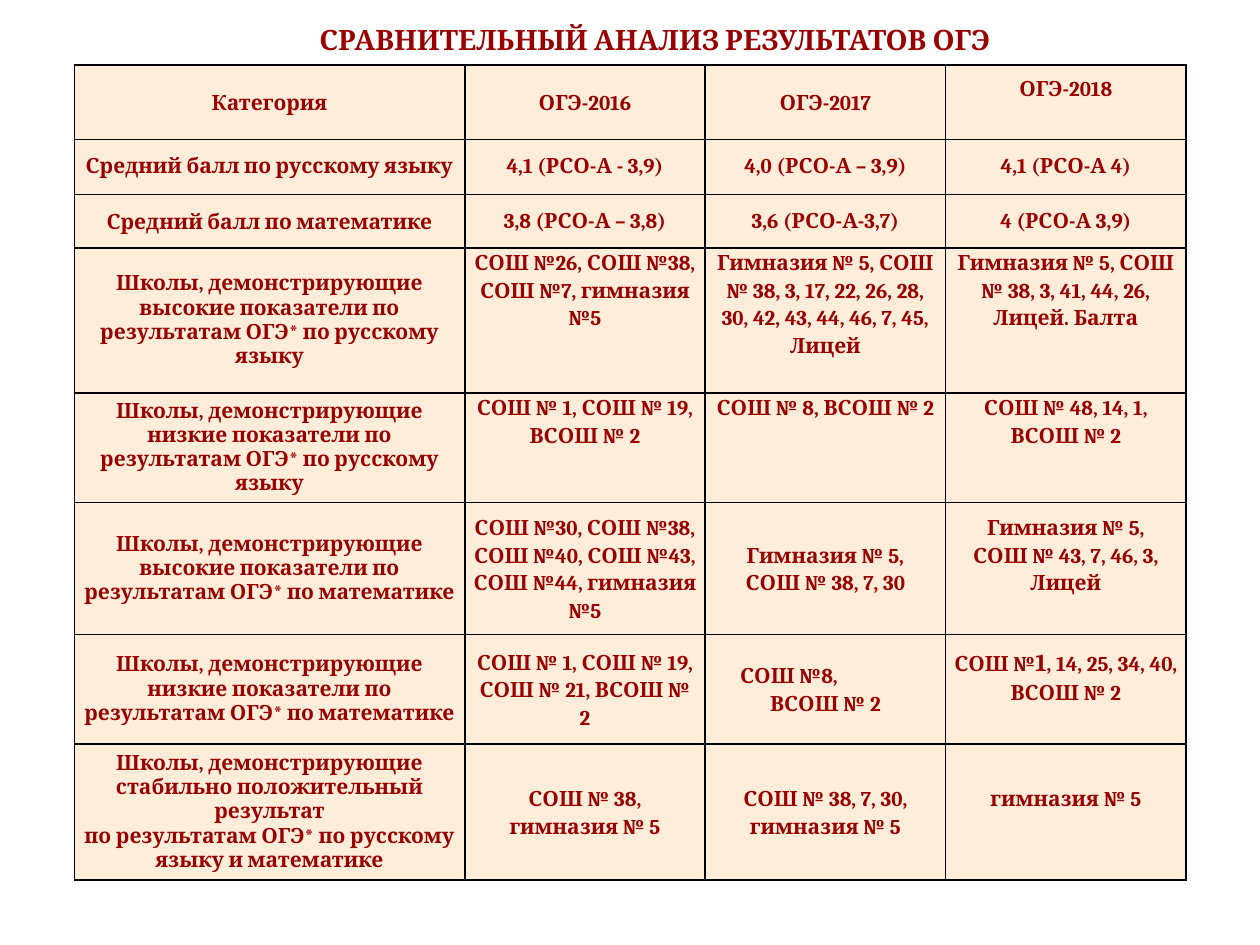
from dataclasses import dataclass

from lxml.etree import SubElement
from pptx import Presentation
from pptx.dml.color import RGBColor
from pptx.enum.text import MSO_ANCHOR as Anchor, MSO_AUTO_SIZE as AutoSize, PP_ALIGN as Align
from pptx.oxml.ns import qn
from pptx.util import Pt


@dataclass(frozen=True)
class Theme:
    """Colours, font and type sizes of the slide."""
    font: str = "Cambria"
    ink: str = "990000"
    fill: str = "FFECD9"
    border: str = "000000"
    title: float = 16
    body: float = 12
    large: float = 14


THEME = Theme()
TITLE = "СРАВНИТЕЛЬНЫЙ АНАЛИЗ РЕЗУЛЬТАТОВ ОГЭ"
COLUMNS = [223.1, 137.4, 137.4, 137.4]
HEIGHTS = [42.5, 31.5, 30.5, 82.8, 62.6, 75.5, 62.6, 77.8]
RESULTS = [
    ["Категория", "ОГЭ-2016", "ОГЭ-2017", "ОГЭ-2018"],
    ["Средний балл по русскому языку", "4,1 (РСО-А - 3,9)", "4,0 (РСО-А – 3,9)", "4,1 (РСО-А 4)"],
    ["Средний балл по математике", "3,8 (РСО-А – 3,8)", "3,6 (РСО-А-3,7)", "4 (РСО-А 3,9)"],
    ["Школы, демонстрирующие высокие показатели по результатам ОГЭ* по русскому языку",
     "СОШ №26, СОШ №38, СОШ №7, гимназия №5",
     "Гимназия № 5, СОШ № 38, 3, 17, 22, 26, 28, 30, 42, 43, 44, 46, 7, 45, Лицей",
     "Гимназия № 5, СОШ № 38, 3, 41, 44, 26, Лицей. Балта"],
    ["Школы, демонстрирующие низкие показатели по результатам ОГЭ* по русскому языку",
     "СОШ № 1, СОШ № 19, ВСОШ № 2", "СОШ № 8, ВСОШ № 2", "СОШ № 48, 14, 1, ВСОШ № 2"],
    ["Школы, демонстрирующие высокие показатели по результатам ОГЭ* по математике",
     "СОШ №30, СОШ №38, СОШ №40, СОШ №43, СОШ №44, гимназия №5",
     "Гимназия № 5,\nСОШ № 38, 7, 30", "Гимназия № 5,\nСОШ № 43, 7, 46, 3, Лицей"],
    ["Школы, демонстрирующие низкие показатели по результатам ОГЭ* по математике",
     "СОШ № 1, СОШ № 19, СОШ № 21, ВСОШ № 2", "СОШ №8,\nВСОШ № 2",
     "СОШ №|1|, 14, 25, 34, 40, ВСОШ № 2"],
    ["Школы, демонстрирующие стабильно положительный результат\n"
     "по результатам ОГЭ* по русскому языку и математике",
     "СОШ № 38, гимназия № 5", "СОШ № 38, 7, 30, гимназия № 5", "гимназия № 5"],
]
LOOSE = 1.15
SPACING = {0: (LOOSE, LOOSE), 1: (1, 1), 2: (LOOSE, 1)}
TOP_ROWS = (3, 4)
RAISED_ROWS = (0, 5, 6, 7)
INDENTED = (6, 2)


def apply(target, values):
    """Set each named attribute of the target."""
    for name, value in values.items():
        setattr(target, name, value)


def add_span(para, text, size):
    """Add a bold run in the theme font and ink."""
    span = para.add_run()
    span.text = text
    apply(span.font, {"name": THEME.font, "size": Pt(size), "bold": True})
    span.font.color.rgb = RGBColor.from_string(THEME.ink)


def add_title(page):
    """Place and format the title placeholder."""
    box = page.shapes.title
    apply(box, {"left": Pt(28.8), "top": Pt(9.4), "width": Pt(691.2), "height": Pt(46)})
    apply(box.text_frame, {"vertical_anchor": Anchor.TOP, "word_wrap": True,
                           "auto_size": AutoSize.NONE})
    para = box.text_frame.paragraphs[0]
    apply(para, {"alignment": Align.CENTER, "line_spacing": 1, "space_before": Pt(0)})
    add_span(para, TITLE, THEME.title)


def add_borders(cell):
    """Draw a thin line on all four sides of a cell."""
    properties = cell._tc.get_or_add_tcPr()
    for side in ("a:lnL", "a:lnR", "a:lnT", "a:lnB"):
        line = SubElement(properties, qn(side), w=str(Pt(1)))
        solid = SubElement(line, qn("a:solidFill"))
        SubElement(solid, qn("a:srgbClr"), val=THEME.border)


def fill_cell(cell, text, row, column):
    """Format one cell and write its paragraphs; bars enclose large text."""
    raised = column == 3 and row in RAISED_ROWS
    top = column > 0 and row in TOP_ROWS
    add_borders(cell)
    cell.fill.solid()
    cell.fill.fore_color.rgb = RGBColor.from_string(THEME.fill)
    apply(cell, {"margin_left": Pt(4.5), "margin_right": Pt(4.5), "margin_top": Pt(0),
                 "margin_bottom": Pt(16 if raised else 0),
                 "vertical_anchor": Anchor.TOP if top else Anchor.MIDDLE})
    frame = cell.text_frame
    spacing = SPACING.get(row, (1, LOOSE))[min(column, 1)]
    for number, line in enumerate(text.split("\n")):
        para = frame.add_paragraph() if number else frame.paragraphs[0]
        apply(para, {"alignment": Align.CENTER, "line_spacing": spacing})
        if (row, column) == INDENTED and number == 0:
            para.alignment = Align.LEFT
            para._p.get_or_add_pPr().set("marL", str(Pt(15.5)))
        for part, words in enumerate(line.split("|")):
            add_span(para, words, THEME.large if part % 2 else THEME.body)


def add_results(page):
    """Add the table of exam results."""
    frame = page.shapes.add_table(len(HEIGHTS), len(COLUMNS), Pt(42.5), Pt(37.2),
                                  Pt(sum(COLUMNS)), Pt(sum(HEIGHTS)))
    table = frame.table
    apply(table, {"first_row": False, "horz_banding": False})
    for column, width in zip(table.columns, COLUMNS):
        column.width = Pt(width)
    for row, height in zip(table.rows, HEIGHTS):
        row.height = Pt(height)
    for row, texts in enumerate(RESULTS):
        for column, text in enumerate(texts):
            fill_cell(table.cell(row, column), text, row, column)


def main():
    """Build and save the slide."""
    deck = Presentation()
    apply(deck, {"slide_width": Pt(720), "slide_height": Pt(540)})
    page = deck.slides.add_slide(deck.slide_layouts[5])
    add_title(page)
    add_results(page)
    deck.save("out.pptx")


if __name__ == "__main__":
    main()
